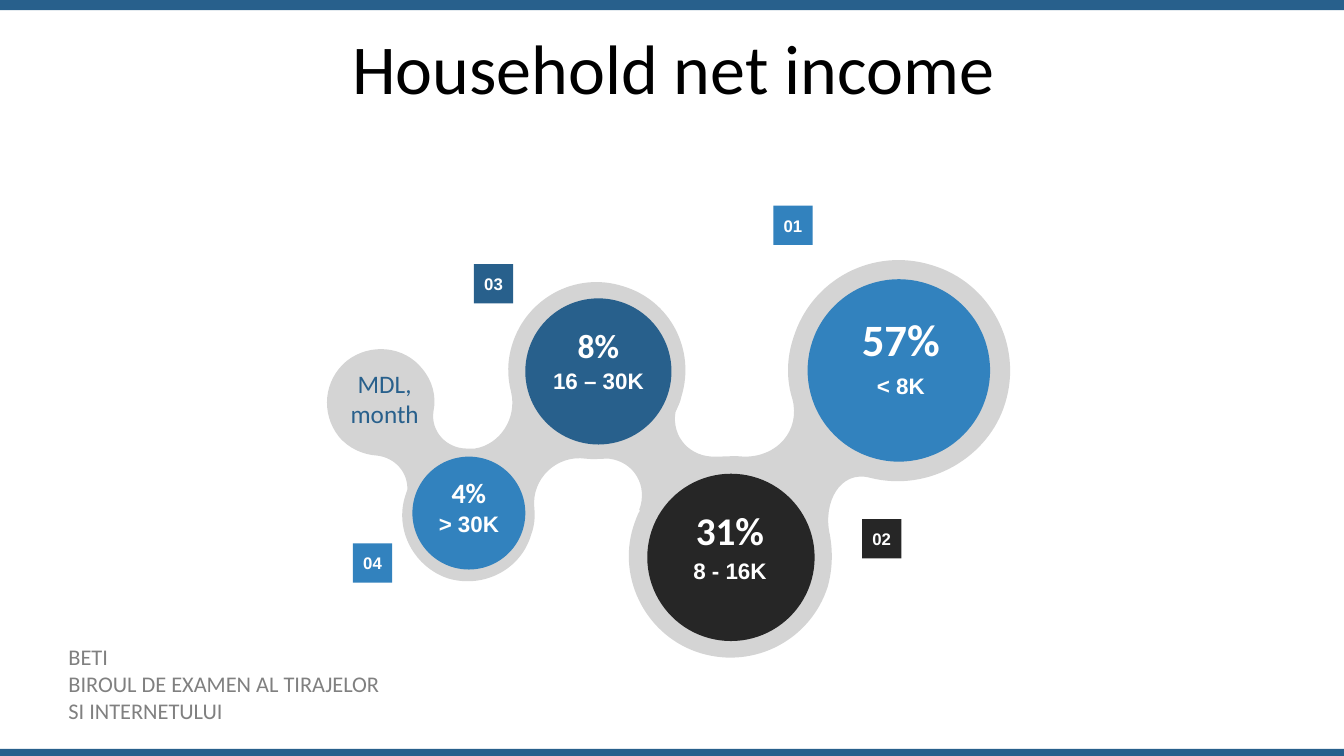
from lxml import etree
from pptx import Presentation
from pptx.dml.color import RGBColor
from pptx.enum.shapes import MSO_SHAPE as Shape
from pptx.enum.text import MSO_ANCHOR as Anchor, PP_ALIGN as Align
from pptx.oxml.ns import qn
from pptx.util import Inches, Pt

NAVY = RGBColor(0x28, 0x60, 0x8C)
BLUE = RGBColor(0x32, 0x82, 0xBE)
DARK = RGBColor(0x26, 0x26, 0x26)
SILVER = RGBColor(0xD4, 0xD4, 0xD4)
GRAY = RGBColor(0x80, 0x80, 0x80)
WHITE = RGBColor(0xFF, 0xFF, 0xFF)
BLACK = RGBColor(0, 0, 0)

# Bezier segments of the blob: two control points and an end point each
BLOB_START = (9.97, 4)
BLOB_CURVES = [
    (9.81, 4.53, 9.22, 4.89, 8.63, 4.74),
    (8.33, 4.66, 8.16, 4.99, 8.23, 5.3),
    (8.26, 5.46, 8.26, 5.64, 8.21, 5.82),
    (8.04, 6.35, 7.48, 6.64, 6.95, 6.48),
    (6.42, 6.32, 6.12, 5.75, 6.28, 5.23),
    (6.3, 5.17, 6.32, 5.11, 6.35, 5.06),
    (6.34, 5.06, 6.34, 5.06, 6.34, 5.06),
    (6.43, 4.82, 6.29, 4.58, 6.04, 4.55),
    (5.95, 4.55, 5.89, 4.56, 5.81, 4.55),
    (5.52, 4.51, 5.27, 4.75, 5.3, 5.04),
    (5.31, 5.13, 5.3, 5.22, 5.27, 5.3),
    (5.17, 5.65, 4.8, 5.84, 4.45, 5.74),
    (4.11, 5.63, 3.91, 5.26, 4.02, 4.92),
    (4.03, 4.9, 4.03, 4.88, 4.04, 4.86),
    (4.05, 4.69, 3.92, 4.54, 3.74, 4.52),
    (3.6, 4.51, 3.46, 4.45, 3.36, 4.33),
    (3.18, 4.1, 3.21, 3.77, 3.44, 3.58),
    (3.67, 3.4, 4.01, 3.43, 4.19, 3.66),
    (4.29, 3.78, 4.33, 3.93, 4.3, 4.08),
    (4.27, 4.28, 4.43, 4.45, 4.63, 4.45),
    (4.65, 4.45, 4.68, 4.45, 4.71, 4.45),
    (4.96, 4.41, 5.13, 4.15, 5.07, 3.89),
    (5.03, 3.74, 5.03, 3.58, 5.08, 3.42),
    (5.22, 2.96, 5.71, 2.69, 6.18, 2.84),
    (6.65, 2.98, 6.9, 3.47, 6.76, 3.93),
    (6.75, 3.99, 6.72, 4.04, 6.7, 4.09),
    (6.66, 4.34, 6.85, 4.54, 7.1, 4.53),
    (7.21, 4.53, 7.29, 4.52, 7.37, 4.53),
    (7.71, 4.54, 7.94, 4.27, 7.86, 3.96),
    (7.8, 3.77, 7.8, 3.56, 7.87, 3.35),
    (8.05, 2.77, 8.66, 2.45, 9.24, 2.63),
    (9.82, 2.8, 10.15, 3.42, 9.97, 4),
]

deck = Presentation()
deck.slide_width, deck.slide_height = Inches(13.33), Inches(7.5)
page = deck.slides.add_slide(deck.slide_layouts[5])


def paint(shape, color):
    shape.shadow.inherit = False
    shape.fill.solid()
    shape.fill.fore_color.rgb = color
    shape.line.fill.background()


def write(frame, lines, size, font, color, bold=False, align=Align.CENTER):
    frame.word_wrap = True
    for index, line in enumerate(lines):
        para = frame.add_paragraph() if index else frame.paragraphs[0]
        para.text = line
        para.alignment = align
        para.font.size = Pt(size)
        para.font.name = font
        para.font.bold = bold
        para.font.color.rgb = color


# Bars and title
for top, height in [(0, 0.1), (7.43, 0.07)]:
    bar = page.shapes.add_shape(Shape.RECTANGLE, 0, Inches(top), deck.slide_width, Inches(height))
    paint(bar, NAVY)

title = page.shapes.title
title.left, title.top = Inches(0.35), Inches(0.37)
title.width, title.height = Inches(12.66), Inches(0.79)
title.text_frame.vertical_anchor = Anchor.MIDDLE
write(title.text_frame, ["Household net income"], 50, "Calibri", BLACK)
title.text_frame.paragraphs[0].line_spacing = 0.7

# Blob behind the circles: every three points become one Bezier segment
points = [(Inches(curve[i]), Inches(curve[i + 1])) for curve in BLOB_CURVES for i in (0, 2, 4)]
builder = page.shapes.build_freeform(Inches(BLOB_START[0]), Inches(BLOB_START[1]))
builder.add_line_segments(points, close=True)
blob = builder.convert_to_shape()
paint(blob, SILVER)
segments = list(blob.element.iter(qn("a:lnTo")))
for first in range(0, len(segments), 3):
    bezier = etree.Element(qn("a:cubicBezTo"))
    segments[first].addprevious(bezier)
    for segment in segments[first:first + 3]:
        bezier.append(segment[0])
        segment.getparent().remove(segment)

# Circles: left, top, diameter, colour, share, share size, share top, range, range top, text left
circles = [
    (8.01, 2.77, 1.81, BLUE, "57%", 32, 3.04, "< 8K", 3.64, 8.03),
    (6.42, 4.7, 1.66, DARK, "31%", 28, 4.97, "8 - 16K", 5.48, 6.41),
    (5.21, 2.96, 1.45, NAVY, "8%", 24, 3.17, "16 – 30K", 3.59, 5.21),
    (4.09, 4.53, 1.12, BLUE, "4%", 20, 4.67, "> 30K", 5.01, 4.09),
]
for left, top, size, color, share, share_size, share_top, income, income_top, text_left in circles:
    circle = page.shapes.add_shape(Shape.OVAL, Inches(left), Inches(top), Inches(size), Inches(size))
    paint(circle, color)
    for text, text_size, font, text_top, height in [
        (share, share_size, "Calibri", share_top, share_size / 50),
        (income, 16, "Arial", income_top, 0.37),
    ]:
        box = page.shapes.add_textbox(Inches(text_left), Inches(text_top), Inches(size), Inches(height))
        write(box.text_frame, [text], text_size, font, WHITE, bold=True)

# Numbered tags
for number, left, top, color in [
    ("02", 8.55, 5.15, DARK),
    ("04", 3.5, 5.39, BLUE),
    ("03", 4.7, 2.62, NAVY),
    ("01", 7.67, 2.04, BLUE),
]:
    tag = page.shapes.add_shape(Shape.RECTANGLE, Inches(left), Inches(top), Inches(0.39), Inches(0.39))
    paint(tag, color)
    frame = tag.text_frame
    frame.margin_left = frame.margin_right = 0
    frame.vertical_anchor = Anchor.MIDDLE
    write(frame, [number], 12, "Arial", WHITE, bold=True)

# Unit and publisher
unit = page.shapes.add_textbox(Inches(3.09), Inches(3.6), Inches(1.45), Inches(0.71))
write(unit.text_frame, ["MDL, month"], 18, "Calibri", NAVY)

publisher = page.shapes.add_textbox(Inches(0.58), Inches(6.33), Inches(3.52), Inches(0.91))
write(publisher.text_frame, ["BETI", "BIROUL DE EXAMEN AL TIRAJELOR", "SI INTERNETULUI"],
      16, "Calibri", GRAY, align=Align.JUSTIFY)

deck.save("out.pptx")
